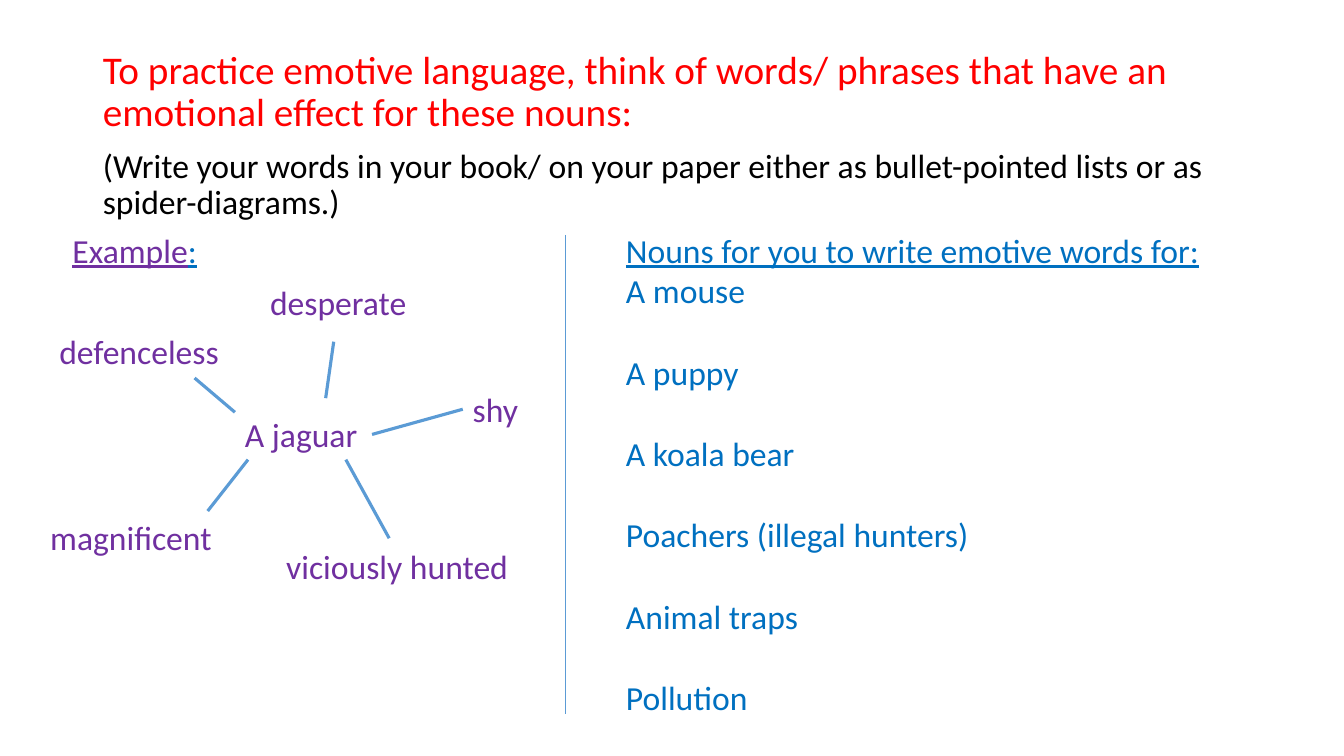
"""Builds a slide on emotive language with a spider diagram and a list of nouns."""
from lxml import etree
from pptx import Presentation
from pptx.dml.color import RGBColor
from pptx.enum.shapes import MSO_CONNECTOR
from pptx.enum.text import MSO_ANCHOR, MSO_AUTO_SIZE, PP_ALIGN
from pptx.oxml.ns import qn
from pptx.util import Pt

PX = 9144
PURPLE, BLUE, LINE = "7030A0", "0070C0", "5B9BD5"


def style(font, color, size=24):
    font.name, font.size, font.bold = "Calibri", Pt(size), False
    font.color.rgb = RGBColor.from_string(color)


def add_text(box, lines, color):
    tf = s.shapes.add_textbox(*[v * PX for v in box]).text_frame
    tf.word_wrap = True
    tf.auto_size = MSO_AUTO_SIZE.SHAPE_TO_FIT_TEXT
    tf.text = "\n".join(lines)
    for p in tf.paragraphs:
        style(p.font, color)
    return tf


prs = Presentation()
prs.slide_width, prs.slide_height = 1333 * PX, 750 * PX
s = prs.slides.add_slide(prs.slide_layouts[5])

title = s.shapes.title
title.left, title.top, title.width, title.height = [v * PX for v in (92, 45, 1150, 200)]
tf = title.text_frame
tf.word_wrap, tf.auto_size = True, MSO_AUTO_SIZE.NONE
tf.vertical_anchor = MSO_ANCHOR.TOP
tf.text = (
    "To practice emotive language, think of words/ phrases that have an emotional effect for these nouns:\n"
    "(Write your words in your book/ on your paper either as bullet-pointed lists or as spider-diagrams.)"
)
for p, color, size, before in zip(tf.paragraphs, ("FF0000", "000000"), (28, 24), (0, 10)):
    p.alignment, p.line_spacing, p.space_before = PP_ALIGN.LEFT, 0.9, Pt(before)
    style(p.font, color, size)

nouns = ["A mouse", "A puppy", "A koala bear", "Poachers (illegal hunters)", "Animal traps", "Pollution"]
tf = add_text((611, 223, 631, 495), ["Nouns for you to write emotive words for:"] + nouns, BLUE)
tf.paragraphs[0].font.underline = True
for p in tf.paragraphs[2:]:
    p.space_before = Pt(29.3)

p = add_text((62, 223, 171, 50), ["Example"], PURPLE).paragraphs[0]
p.font.underline = True
r = p.add_run()
r.text = ":"
style(r.font, BLUE)

words = [
    ("A jaguar", 233, 406, 171),
    ("shy", 459, 381, 84),
    ("magnificent", 40, 508, 193),
    ("defenceless", 49, 323, 197),
    ("desperate", 258, 275, 171),
    ("viciously hunted", 274, 537, 260),
]
for word, x, y, w in words:
    add_text((x, y, w, 50), [word], PURPLE)

spokes = [
    (323, 395, 331, 339),
    (206, 507, 246, 456),
    (233, 409, 193, 375),
    (386, 534, 343, 456),
    (369, 431, 459, 406),
]
divider = (561, 233, 561, 708)
for ends in spokes + [divider]:
    c = s.shapes.add_connector(MSO_CONNECTOR.STRAIGHT, *[v * PX for v in ends])
    c.line.color.rgb = RGBColor.from_string(LINE)
    c.line.width = Pt(0.5 if ends == divider else 2.25)
    etree.SubElement(c.element.spPr, qn("a:effectLst"))

prs.save("out.pptx")
